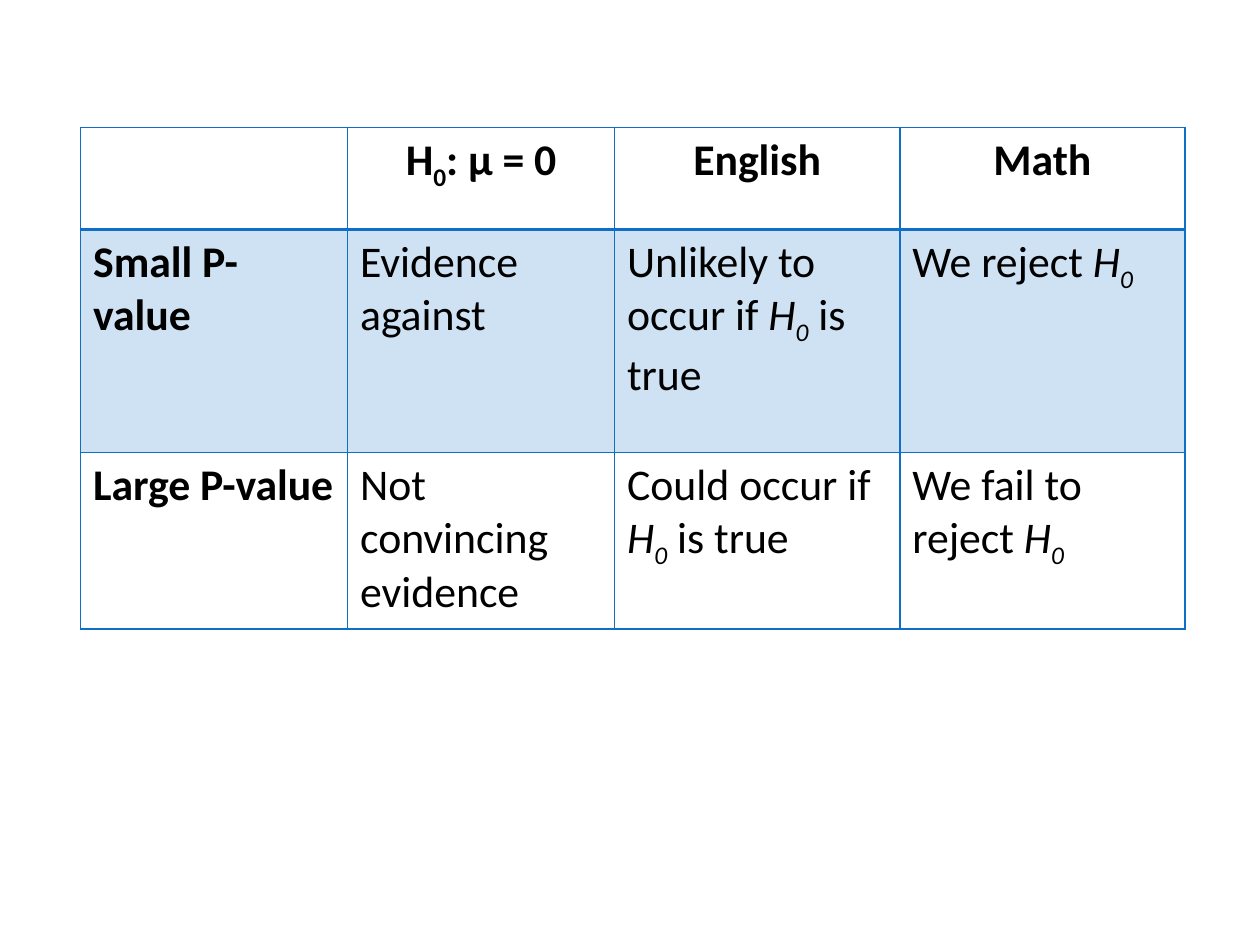
from lxml import etree
from pptx import Presentation
from pptx.dml.color import RGBColor
from pptx.enum.text import PP_ALIGN as Align
from pptx.oxml.ns import qn
from pptx.util import Pt

BLUE = RGBColor(0x0F, 0x6F, 0xC6)
BLACK = RGBColor(0x00, 0x00, 0x00)

COLUMN_WIDTHS = [152.6, 152.6, 163, 163]
ROW_HEIGHTS = [58.4, 127.4, 100.8]
# Each "H_0" stands for H with a subscript zero
CONTENT = [
    ["", "H_0: µ = 0", "English", "Math"],
    ["Small P-value", "Evidence against", "Unlikely to occur if H_0 is true", "We reject H_0"],
    ["Large P-value", "Not convincing evidence", "Could occur if H_0 is true", "We fail to reject H_0"],
]


def add_border(cell, side, width):
    line = etree.SubElement(cell._tc.get_or_add_tcPr(), qn(f"a:ln{side}"), w=str(Pt(width)))
    solid = etree.SubElement(line, qn("a:solidFill"))
    etree.SubElement(solid, qn("a:srgbClr"), val=str(BLUE))


def write_text(paragraph, text, italic_symbol):
    before, symbol, after = text.partition("H_0")
    pieces = [(before, False, False)]
    if symbol:
        pieces += [("H", italic_symbol, False), ("0", italic_symbol, True)]
    pieces.append((after, False, False))
    for piece, italic, subscript in pieces:
        if piece:
            run = paragraph.add_run()
            run.text = piece
            if italic:
                run.font.italic = True
            if subscript:
                run.font._element.set("baseline", "-25000")


prs = Presentation()
prs.slide_width, prs.slide_height = Pt(720), Pt(540)
slide = prs.slides.add_slide(prs.slide_layouts[6])

# Table grid
table = slide.shapes.add_table(
    len(ROW_HEIGHTS), len(COLUMN_WIDTHS), Pt(46), Pt(72.8),
    Pt(sum(COLUMN_WIDTHS)), Pt(sum(ROW_HEIGHTS))).table
table.horz_banding = False
for column, width in zip(table.columns, COLUMN_WIDTHS):
    column.width = Pt(width)
for row, height in zip(table.rows, ROW_HEIGHTS):
    row.height = Pt(height)

for r, texts in enumerate(CONTENT):
    for c, text in enumerate(texts):
        cell = table.cell(r, c)

        # Borders, with a heavier rule under the header
        for side in "LRTB":
            under_header = (r, side) in [(0, "B"), (1, "T")]
            add_border(cell, side, 2 if under_header else 1)

        # Tinted middle row
        if r == 1:
            cell.fill.solid()
            cell.fill.fore_color.rgb = BLUE
            tint = cell._tc.tcPr.find(qn("a:solidFill")).find(qn("a:srgbClr"))
            etree.SubElement(tint, qn("a:alpha"), val="20000")
        else:
            cell.fill.background()

        # Text, bold in the header row and the first column
        paragraph = cell.text_frame.paragraphs[0]
        paragraph.alignment = Align.CENTER if r == 0 else Align.LEFT
        font = paragraph.font
        font.name, font.size = "Calibri", Pt(25)
        font.bold = r == 0 or c == 0
        font.color.rgb = BLACK
        write_text(paragraph, text, italic_symbol=r > 0)

prs.save("out.pptx")
